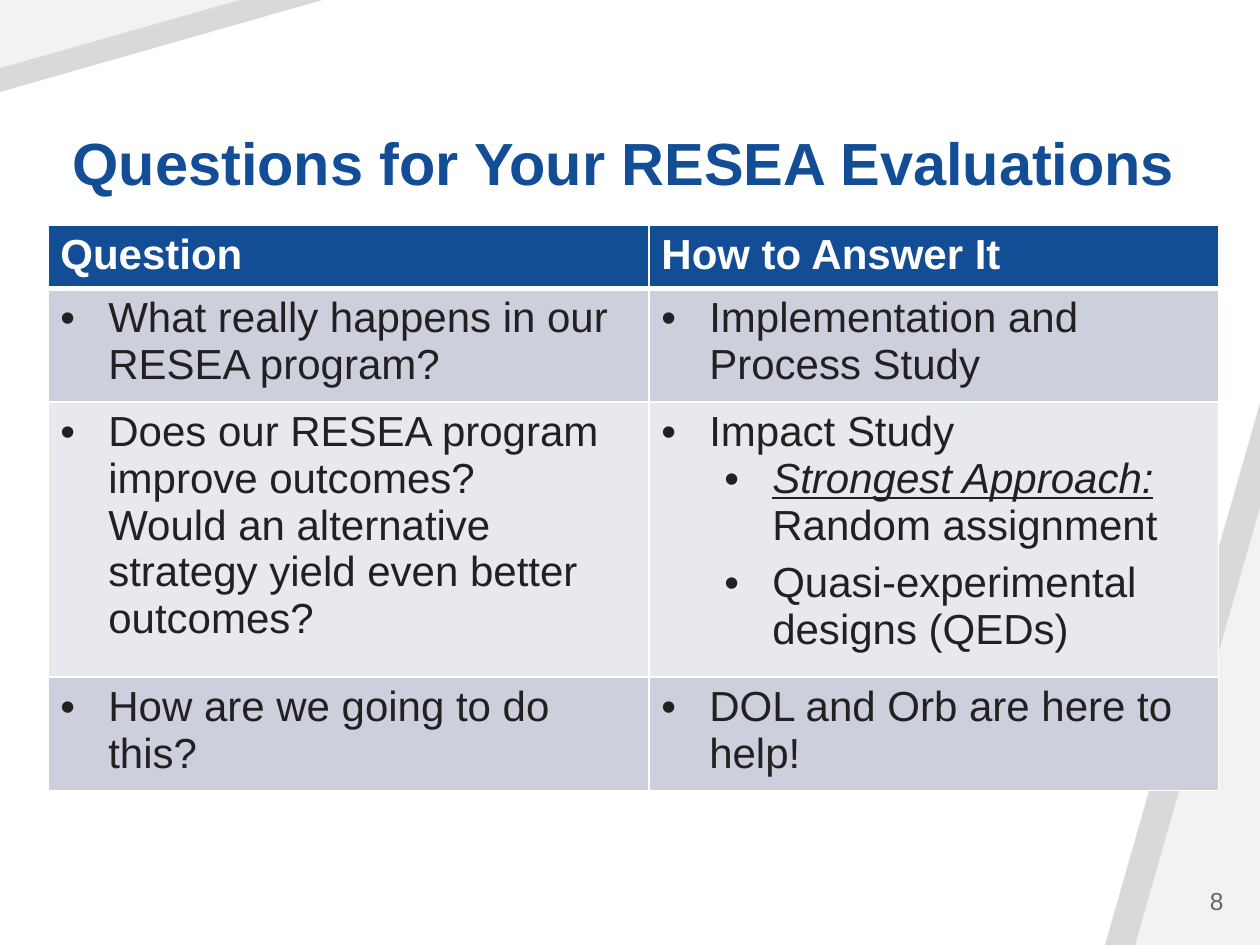
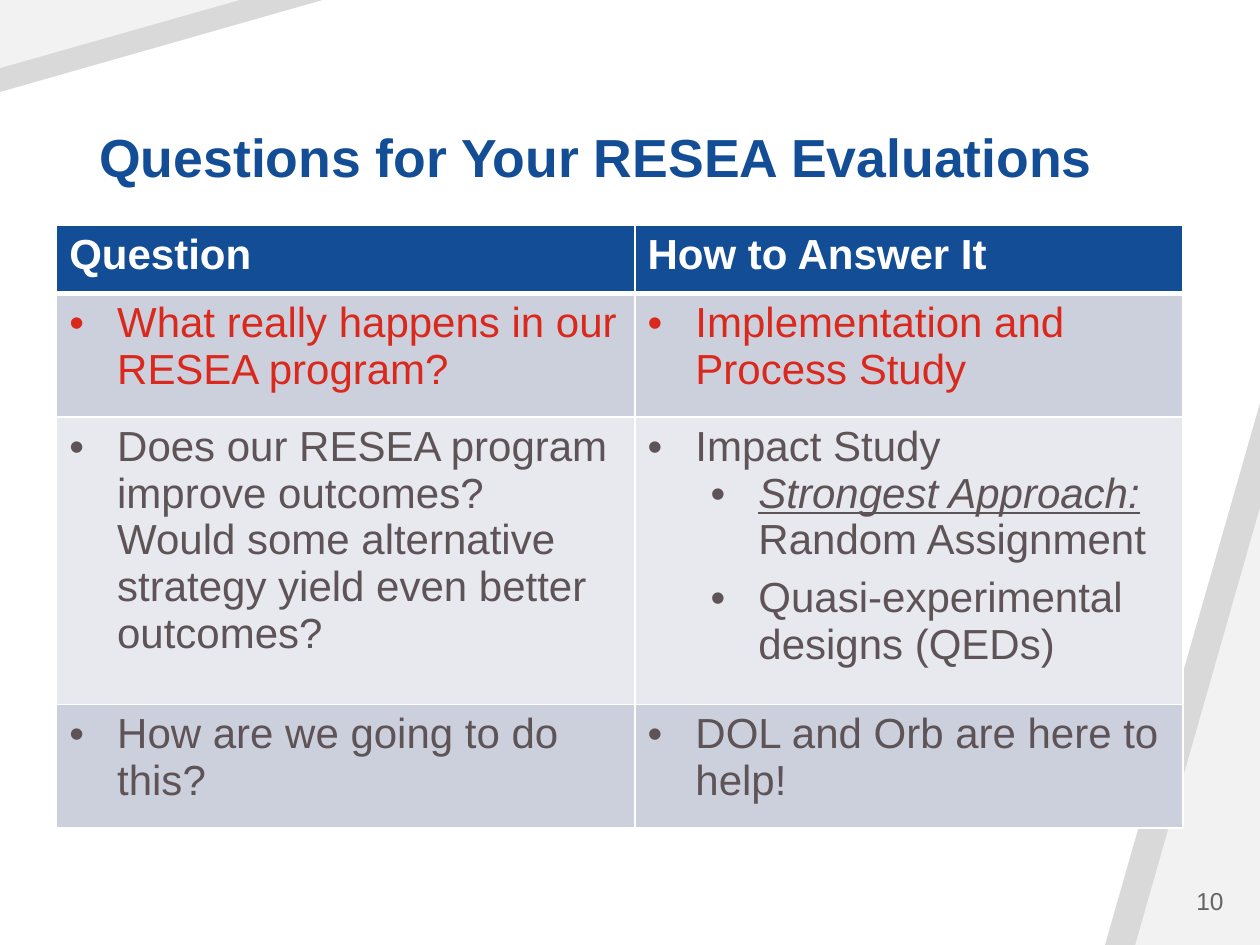
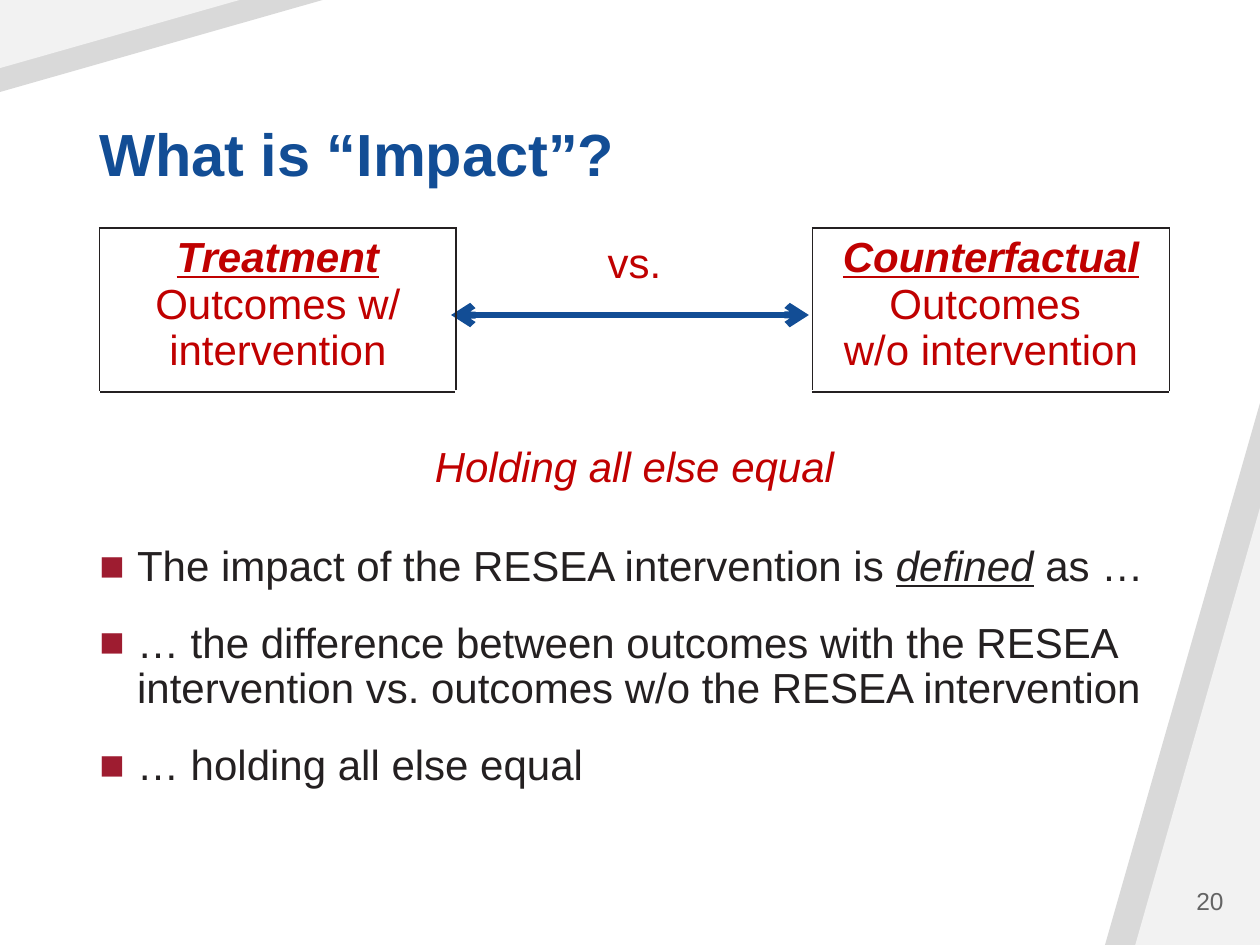
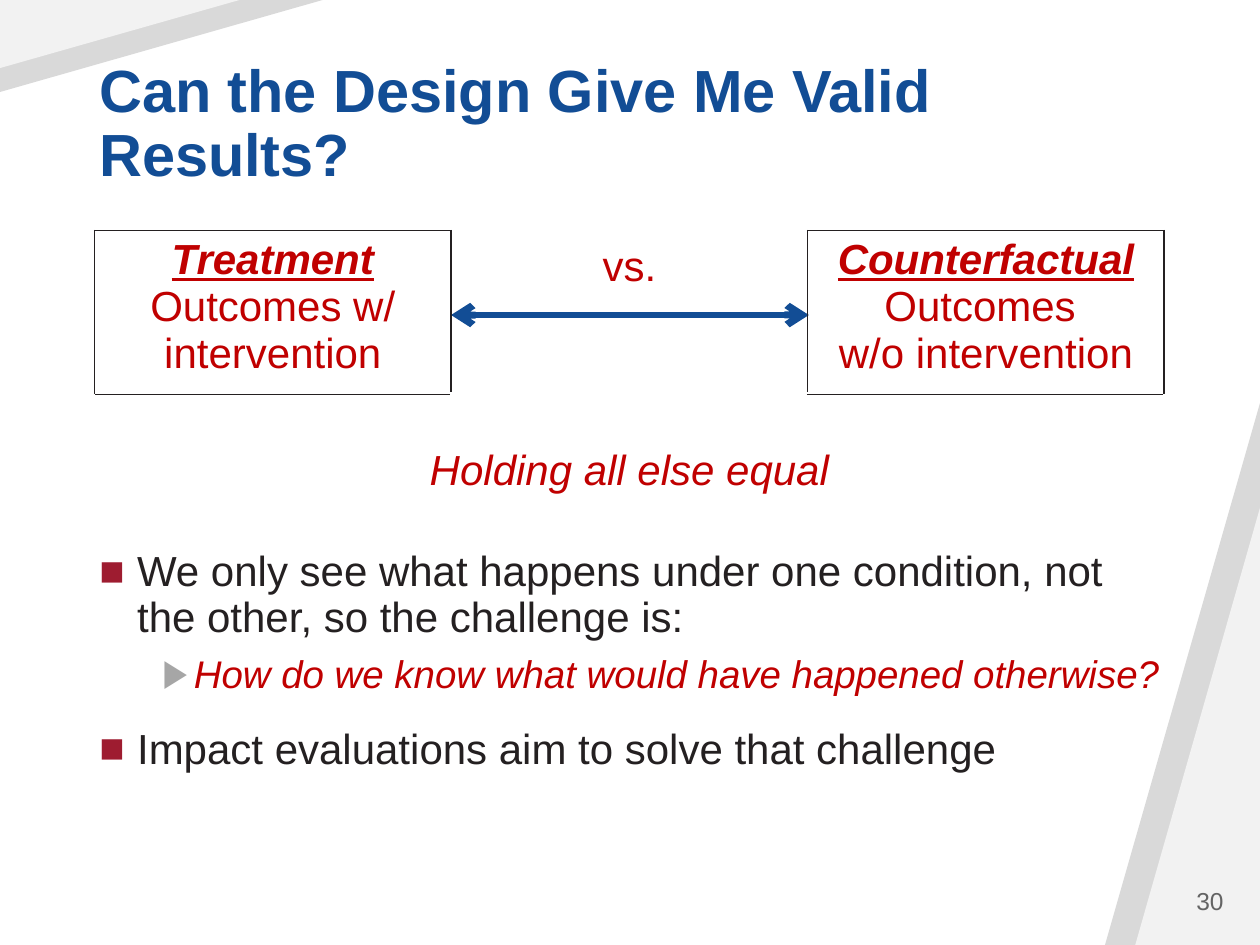
"""Build four slides on questions, impact and design validity of RESEA evaluations."""
from dataclasses import dataclass
from typing import NamedTuple, Optional

from lxml import etree
from pptx import Presentation
from pptx import util as u
from pptx.dml.color import RGBColor
from pptx.enum import shapes, text
from pptx.oxml.ns import qn

EMU_PER_PX = 9144
FONT = "Arial"
BLUE, INK, RED, WHITE = "124D95", "242021", "C00000", "FFFFFF"
ALERT, MUTED, NUMBER = "DA291C", "5E5457", "646464"
BAND, LIGHT_BAND = "CCD0DD", "E7E9EF"
DARK_GREY, PALE_GREY = "D9D9D9", "F2F2F2"
CENTER, RIGHT = text.PP_ALIGN.CENTER, text.PP_ALIGN.RIGHT
TOP, MIDDLE, BOTTOM = text.MSO_ANCHOR.TOP, text.MSO_ANCHOR.MIDDLE, text.MSO_ANCHOR.BOTTOM


class Box(NamedTuple):
    left: int
    top: int
    width: int
    height: int


class Bullet(NamedTuple):
    char: str
    margin: int
    hang: int
    color: Optional[str] = None
    level: int = 0


class Triangle(NamedTuple):
    box: Box
    color: str
    rotation: int = 0


class Edge(NamedTuple):
    color: str
    width: int = 1


@dataclass
class Run:
    text: str
    bold: bool = False
    italic: bool = False
    underline: bool = False
    color: Optional[str] = None
    size: Optional[float] = None


@dataclass
class Para:
    runs: list[Run]
    bullet: Optional[Bullet] = None
    align: Optional[text.PP_ALIGN] = None
    before: int = 0
    spacing: Optional[float] = None


DOT = Bullet("•", 38, 38)
SUB_DOT = Bullet("•", 88, 38, level=1)
SQUARE = Bullet("■", 30, 30, "9E1C30")
ARROW = Bullet("▶", 75, 25, "A6A6A6", 1)

CORNERS = [
    Triangle(Box(877, 320, 123, 430), DARK_GREY),
    Triangle(Box(901, 403, 99, 347), PALE_GREY),
    Triangle(Box(0, 0, 256, 73), DARK_GREY, 180),
    Triangle(Box(0, 0, 190, 54), PALE_GREY, 180),
]
TITLE_BOX = Box(69, 40, 870, 115)
NUMBER_BOX = Box(841, 695, 140, 40)


def px(n: float) -> int:
    return u.Emu(round(n * EMU_PER_PX))


def rgb(color: str) -> RGBColor:
    return RGBColor.from_string(color)


def place(box: Box) -> list[int]:
    return [px(n) for n in box]


def add_text(p, words: str, *, size: float, color: str, bold=False, italic=False, underline=False) -> None:
    for i, line in enumerate(words.split("\n")):
        if i:
            p.add_line_break()
        if line:
            r = p.add_run()
            r.text = line
            f = r.font
            f.name, f.size, f.color.rgb = FONT, u.Pt(size), rgb(color)
            f.bold, f.italic, f.underline = bold, italic, underline


def add_bullet(p, b: Bullet) -> None:
    p.level = b.level
    pPr = p._p.get_or_add_pPr()
    pPr.set("marL", str(px(b.margin)))
    pPr.set("indent", str(-px(b.hang)))
    if b.color:
        clr = etree.SubElement(pPr, qn("a:buClr"))
        etree.SubElement(clr, qn("a:srgbClr"), val=b.color)
    etree.SubElement(pPr, qn("a:buFont"), typeface=FONT)
    etree.SubElement(pPr, qn("a:buChar"), char=b.char)


def fill_text(tf, paras: list[Para], size: float, color: str) -> None:
    tf.word_wrap = True
    for i, para in enumerate(paras):
        p = tf.add_paragraph() if i else tf.paragraphs[0]
        if para.bullet:
            add_bullet(p, para.bullet)
        if para.align is not None:
            p.alignment = para.align
        if para.spacing:
            p.line_spacing = para.spacing
        if i:
            p.space_before = u.Pt(para.before)
        for run in para.runs:
            add_text(p, run.text, size=run.size or size, color=run.color or color,
                     bold=run.bold, italic=run.italic, underline=run.underline)


def add_box(s, box: Box, paras: list[Para], size: float, color: str, anchor=TOP) -> None:
    tf = s.shapes.add_textbox(*place(box)).text_frame
    tf.vertical_anchor = anchor
    fill_text(tf, paras, size, color)


def add_triangle(s, tri: Triangle) -> None:
    sp = s.shapes.add_shape(shapes.MSO_SHAPE.ISOSCELES_TRIANGLE, *place(tri.box))
    sp.adjustments[0] = 1.0
    sp.rotation = tri.rotation
    sp.shadow.inherit = False
    sp.fill.solid()
    sp.fill.fore_color.rgb = rgb(tri.color)
    sp.line.fill.background()


def start_slide(prs, title: str, number: int, box: Box = TITLE_BOX, size: float = 34):
    s = prs.slides.add_slide(prs.slide_layouts[6])
    for tri in CORNERS:
        add_triangle(s, tri)
    add_box(s, box, [Para([Run(title, bold=True)], spacing=0.9)], size, BLUE, BOTTOM)
    add_box(s, NUMBER_BOX, [Para([Run(str(number))], align=RIGHT)], 14, NUMBER, MIDDLE)
    return s


def add_grid(s, left: int, top: int, cols: list[int], rows: list[int]):
    box = Box(left, top, sum(cols), sum(rows))
    table = s.shapes.add_table(len(rows), len(cols), *place(box)).table
    table.first_row = table.horz_banding = False
    for col, width in zip(table.columns, cols):
        col.width = px(width)
    for row, height in zip(table.rows, rows):
        row.height = px(height)
    return table


def set_borders(cell, left: Edge, right: Edge, top: Edge, bottom: Edge) -> None:
    tcPr = cell._tc.get_or_add_tcPr()
    for side, edge in zip("LRTB", (left, right, top, bottom)):
        ln = etree.SubElement(tcPr, qn(f"a:ln{side}"), w=str(u.Pt(edge.width)))
        fill = etree.SubElement(ln, qn("a:solidFill"))
        etree.SubElement(fill, qn("a:srgbClr"), val=edge.color)


def dot(words: str) -> Para:
    return Para([Run(words)], DOT)


def add_question_table(s, left: int, cols: list[int], rows: list[int], colors: list[str],
                       option: str, assignment: str) -> None:
    impact = [
        dot("Impact Study"),
        Para([Run("Strongest Approach: ", italic=True, underline=True), Run(assignment)], SUB_DOT),
        Para([Run("Quasi-experimental designs (QEDs)")], SUB_DOT, before=6),
    ]
    improve = f"Does our RESEA program improve outcomes?\nWould {option} alternative strategy yield even better outcomes?"
    content = [
        [[Para([Run("Question", bold=True)])], [Para([Run("How to Answer It", bold=True)])]],
        [[dot("What really happens in our RESEA program?")], [dot("Implementation and Process Study")]],
        [[dot(improve)], impact],
        [[dot("How are we going to do this?")], [dot("DOL and Orb are here to help!")]],
    ]
    table = add_grid(s, left, 179, cols, rows)
    thin, thick = Edge(WHITE), Edge(WHITE, 3)
    for i, (row, color, band) in enumerate(zip(content, [WHITE, *colors], [BLUE, BAND, LIGHT_BAND, BAND])):
        for j, paras in enumerate(row):
            cell = table.cell(i, j)
            set_borders(cell, thin, thin, thick if i == 1 else thin, thick if i == 0 else thin)
            cell.fill.solid()
            cell.fill.fore_color.rgb = rgb(band)
            fill_text(cell.text_frame, paras, 24, color)


def add_double_arrow(s, left: int, right: int, y: int) -> None:
    line = s.shapes.add_connector(shapes.MSO_CONNECTOR.STRAIGHT, px(left), px(y), px(right), px(y))
    line.line.color.rgb = rgb(BLUE)
    line.line.width = u.Pt(4)
    ln = line.line._get_or_add_ln()
    for end in ("headEnd", "tailEnd"):
        etree.SubElement(ln, qn(f"a:{end}"), type="arrow")
    etree.SubElement(line._element.spPr, qn("a:effectLst"))


def add_comparison(s, left: int, top: int, rows: list[int]) -> None:
    add_double_arrow(s, 358, 642, 250)
    table = add_grid(s, left, top, [283] * 3, rows)
    dark, clear, wide = Edge(INK), Edge(WHITE), Edge(WHITE, 3)

    def group(name: str, outcome: str) -> list[Run]:
        return [Run(f"{name}\n", bold=True, italic=True, underline=True), Run(outcome)]

    heads = [
        group("Treatment", "Outcomes w/ intervention"),
        [Run("vs.")],
        group("Counterfactual", "Outcomes \nw/o intervention"),
    ]
    for j, runs in enumerate(heads):
        cell, below = table.cell(0, j), table.cell(1, j)
        is_gap = j == 1
        set_borders(cell, dark, dark, clear if is_gap else dark, wide if is_gap else dark)
        set_borders(below, clear, clear, wide if is_gap else dark, clear)
        cell.fill.background()
        below.fill.background()
        if is_gap:
            cell.vertical_anchor = MIDDLE
            cell.margin_bottom = px(78)
        fill_text(cell.text_frame, [Para(runs, align=CENTER)], 24, RED)
    note = table.cell(1, 0)
    note.merge(table.cell(1, 2))
    note.margin_top = px(42)
    fill_text(note.text_frame, [Para([Run("Holding all else equal", italic=True)], align=CENTER)], 24, RED)


def point(*runs: Run) -> Para:
    return Para(list(runs), SQUARE, before=18, spacing=0.9)


def main() -> None:
    prs = Presentation()
    prs.slide_width, prs.slide_height = px(1000), px(750)
    questions = "Questions for Your RESEA Evaluations"

    s = start_slide(prs, questions, 8, Box(48, 55, 906, 107))
    add_question_table(s, 38, [477, 452], [48, 85, 205, 85], [INK] * 3, "an", "Random assignment")

    s = start_slide(prs, questions, 10, size=30.6)
    add_question_table(s, 45, [459, 435], [54, 98, 228, 98], [ALERT, MUTED, MUTED],
                       "some", "Random Assignment")

    s = start_slide(prs, "What is “Impact”?", 20)
    add_box(s, Box(69, 428, 870, 263), [
        point(Run("The impact of the RESEA intervention is "),
              Run("defined", italic=True, underline=True), Run(" as …")),
        point(Run("… the difference between outcomes with the RESEA intervention "
                  "vs. outcomes w/o the RESEA intervention")),
        point(Run("… holding all else equal")),
    ], 24, INK)
    add_comparison(s, 79, 181, [122, 98])

    s = start_slide(prs, "Can the Design Give Me Valid Results?", 30)
    add_box(s, Box(69, 432, 870, 273), [
        point(Run("We only see what happens under one condition, not the other, so the challenge is:")),
        Para([Run("How do we know what would have happened otherwise?", italic=True, color=RED, size=22)],
             ARROW, before=8, spacing=0.9),
        point(Run("Impact evaluations aim to solve that challenge")),
    ], 24, INK)
    add_comparison(s, 75, 183, [130, 90])

    prs.save("out.pptx")


if __name__ == "__main__":
    main()
